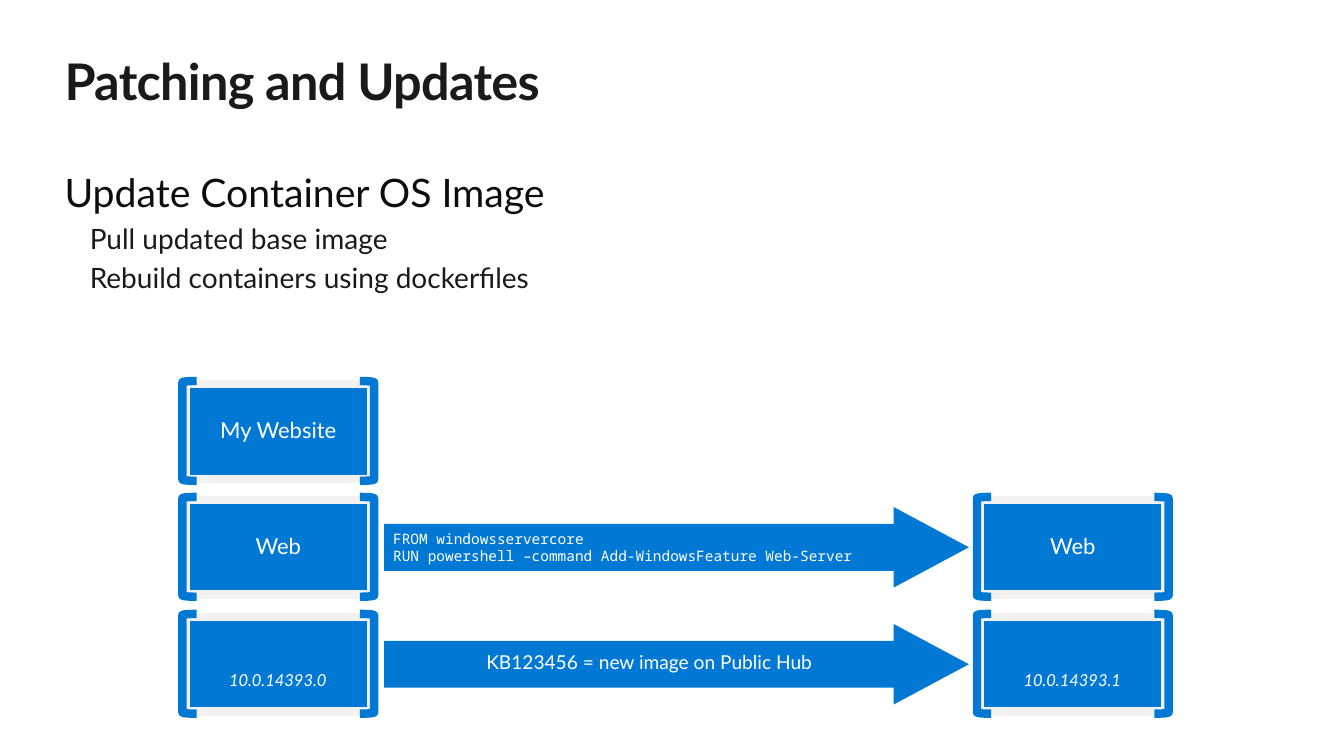
from pptx import Presentation
from pptx.dml.color import RGBColor
from pptx.enum.shapes import MSO_SHAPE
from pptx.enum.text import MSO_ANCHOR, MSO_AUTO_SIZE, PP_ALIGN
from pptx.oxml.ns import qn
from pptx.util import Inches, Pt
from lxml.etree import SubElement

BLUE = RGBColor(0x00, 0x78, 0xD4)
PALE = RGBColor(0xF2, 0xF2, 0xF2)
WHITE = RGBColor(0xFF, 0xFF, 0xFF)
INK = RGBColor(0x1A, 0x1A, 0x1A)
HEADING = RGBColor(0x0D, 0x0D, 0x0D)

LABEL_INSETS = (0.2, 0.16, 0.2, 0.16)
LABEL = {"alignment": PP_ALIGN.CENTER, "line_spacing": 0.9}
SPACED_LABEL = {**LABEL, "space_after": Pt(5.9)}
PLAIN = {"alignment": PP_ALIGN.LEFT, "line_spacing": 1.0}

OLD_LEFT, NEW_LEFT = 1.81, 9.69
ROW_TOPS = (3.78, 4.93, 6.09)
BLOCK_WIDTH, BLOCK_HEIGHT, BRACKET_WIDTH = 1.9, 0.99, 0.14


def apply(target, values):
    for name, value in values.items():
        setattr(target, name, value)


def place(shape, left, top, width, height):
    apply(shape, {"left": Inches(left), "top": Inches(top),
                  "width": Inches(width), "height": Inches(height)})


def set_frame(shape, insets, anchor=MSO_ANCHOR.TOP):
    names = ("margin_left", "margin_top", "margin_right", "margin_bottom")
    apply(shape.text_frame, dict(zip(names, map(Inches, insets))))
    apply(shape.text_frame, {"word_wrap": True, "vertical_anchor": anchor,
                             "auto_size": MSO_AUTO_SIZE.NONE})


def write(para, text, size, color=WHITE, layout=PLAIN, **font):
    apply(para, layout)
    span = para.add_run()
    span.text = text
    apply(span.font, {"name": "Lato", "size": Pt(size), **font})
    span.font.color.rgb = color
    return span


def add_text_box(page, area, insets, anchor=MSO_ANCHOR.TOP):
    box = page.shapes.add_textbox(*map(Inches, area))
    set_frame(box, insets, anchor)
    return box.text_frame


def add_preset(page, preset, area, fill=None, line=None):
    shape = page.shapes.add_shape(preset, *map(Inches, area))
    shape.shadow.inherit = False
    for part, color in ((shape.fill, fill), (shape.line.fill, line)):
        if color is None:
            part.background()
        else:
            part.solid()
            part.fore_color.rgb = color
    if line is not None:
        shape.line.width = Pt(6)
    return shape


def add_block(page, left, top, label=None, version=None):
    """Draw one container layer: a panel held by two brackets."""
    panel = add_preset(page, MSO_SHAPE.RECTANGLE,
                       (left + 0.03, top + 0.03, BLOCK_WIDTH - 0.06, BLOCK_HEIGHT - 0.05),
                       BLUE, PALE)
    if label:
        set_frame(panel, LABEL_INSETS, MSO_ANCHOR.MIDDLE)
        write(panel.text_frame.paragraphs[0], label, 15.7, layout=LABEL)
    right = left + BLOCK_WIDTH - BRACKET_WIDTH
    for preset, x in ((MSO_SHAPE.RIGHT_BRACKET, right), (MSO_SHAPE.LEFT_BRACKET, left)):
        add_preset(page, preset, (x, top, BRACKET_WIDTH, BLOCK_HEIGHT), line=BLUE)
    if version:
        frame = add_text_box(page, (left + 0.07, top + 0.42, 1.75, 0.49), LABEL_INSETS)
        write(frame.paragraphs[0], version, 11.8, layout=SPACED_LABEL, italic=True)


def add_arrow(page, row_top):
    arrow = add_preset(page, MSO_SHAPE.RIGHT_ARROW, (3.81, row_top + 0.1, 5.8, 0.8), BLUE)
    arrow.adjustments[0] = 0.582
    arrow.adjustments[1] = 0.934


def fill_title(page):
    title = page.shapes.title
    place(title, 0.64, 0.5, 12.05, 0.61)
    set_frame(title, (0, 0, 0, 0))
    span = write(title.text_frame.paragraphs[0], "Patching and Updates", 36, INK, bold=True)
    span.font._element.set("spc", "-50")


def fill_body(page):
    body = page.placeholders[1]
    place(body, 0.64, 1.67, 6.24, 1.28)
    set_frame(body, (0, 0, 0, 0))
    lines = (
        ("Update Container OS Image", 0, 28, HEADING),
        ("Pull updated base image", 1, 20, INK),
        ("Rebuild containers using dockerfiles", 1, 20, INK),
    )
    for index, (text, level, size, color) in enumerate(lines):
        para = body.text_frame.add_paragraph() if index else body.text_frame.paragraphs[0]
        properties = para._p.get_or_add_pPr()
        properties.set("marL", str(Inches(0.25 * level)))
        properties.set("indent", "0")
        SubElement(properties, qn("a:buNone"))
        layout = {**PLAIN, "level": level, "space_before": Pt(size * 0.2 if index else 0)}
        write(para, text, size, color, layout)


def add_build_step(page, row_top):
    add_arrow(page, row_top)
    frame = add_text_box(page, (3.9, row_top + 0.28, 5.17, 0.45), (0, 0.05, 0, 0.05))
    commands = ("FROM windowsservercore",
                "RUN powershell –command Add-WindowsFeature Web-Server")
    for index, command in enumerate(commands):
        para = frame.add_paragraph() if index else frame.paragraphs[0]
        write(para, command, 10.3, name="Noto Sans Mono")


def add_patch_step(page, row_top):
    add_arrow(page, row_top)
    frame = add_text_box(page, (3.81, row_top + 0.23, 5.26, 0.52),
                         LABEL_INSETS, MSO_ANCHOR.MIDDLE)
    write(frame.paragraphs[0], "KB123456 = new image on Public Hub", 13.7,
          layout=SPACED_LABEL)


def main():
    deck = Presentation()
    apply(deck, {"slide_width": Inches(13.33), "slide_height": Inches(7.5)})
    page = deck.slides.add_slide(deck.slide_layouts[1])
    fill_title(page)
    fill_body(page)

    site_row, server_row, base_row = ROW_TOPS
    add_build_step(page, server_row)
    add_patch_step(page, base_row)
    for left, version in ((OLD_LEFT, "10.0.14393.0"), (NEW_LEFT, "10.0.14393.1")):
        add_block(page, left, base_row, version=version)
        add_block(page, left, server_row, label="Web")
    add_block(page, OLD_LEFT, site_row, label="My Website")
    deck.save("out.pptx")


if __name__ == "__main__":
    main()
